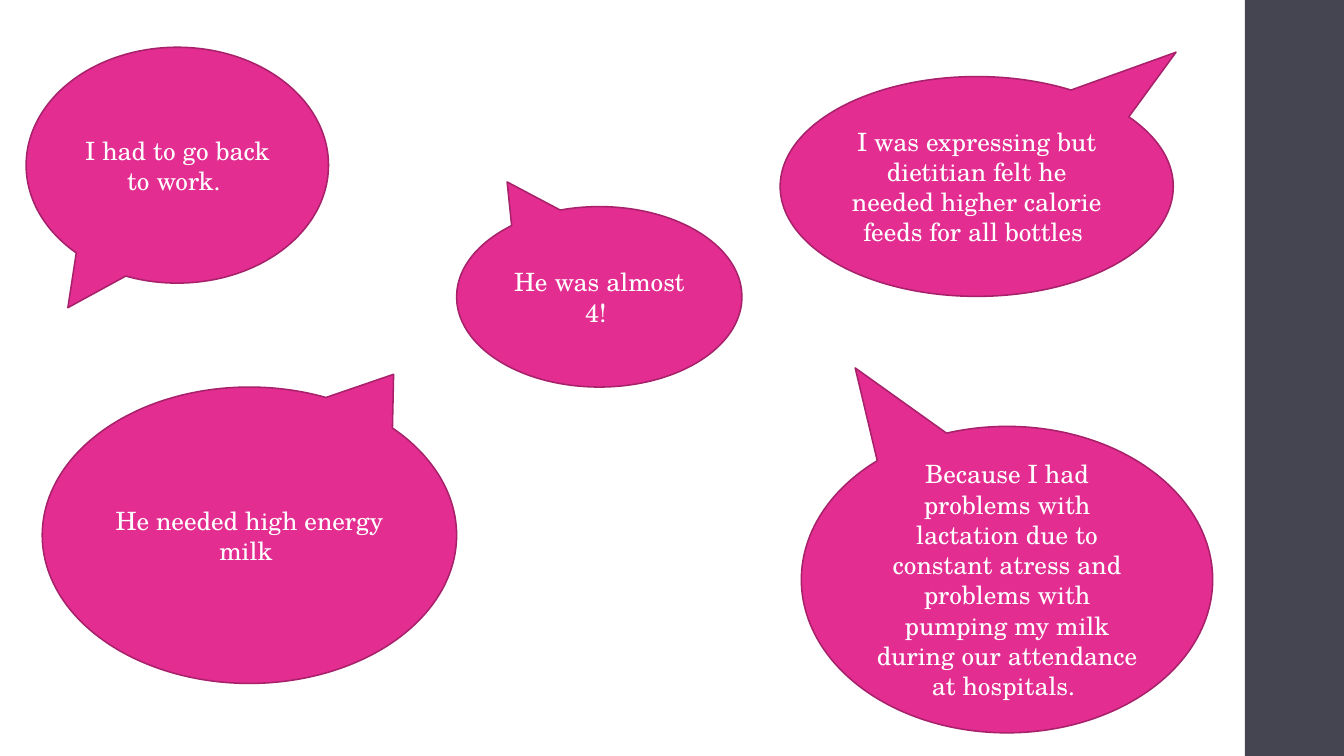
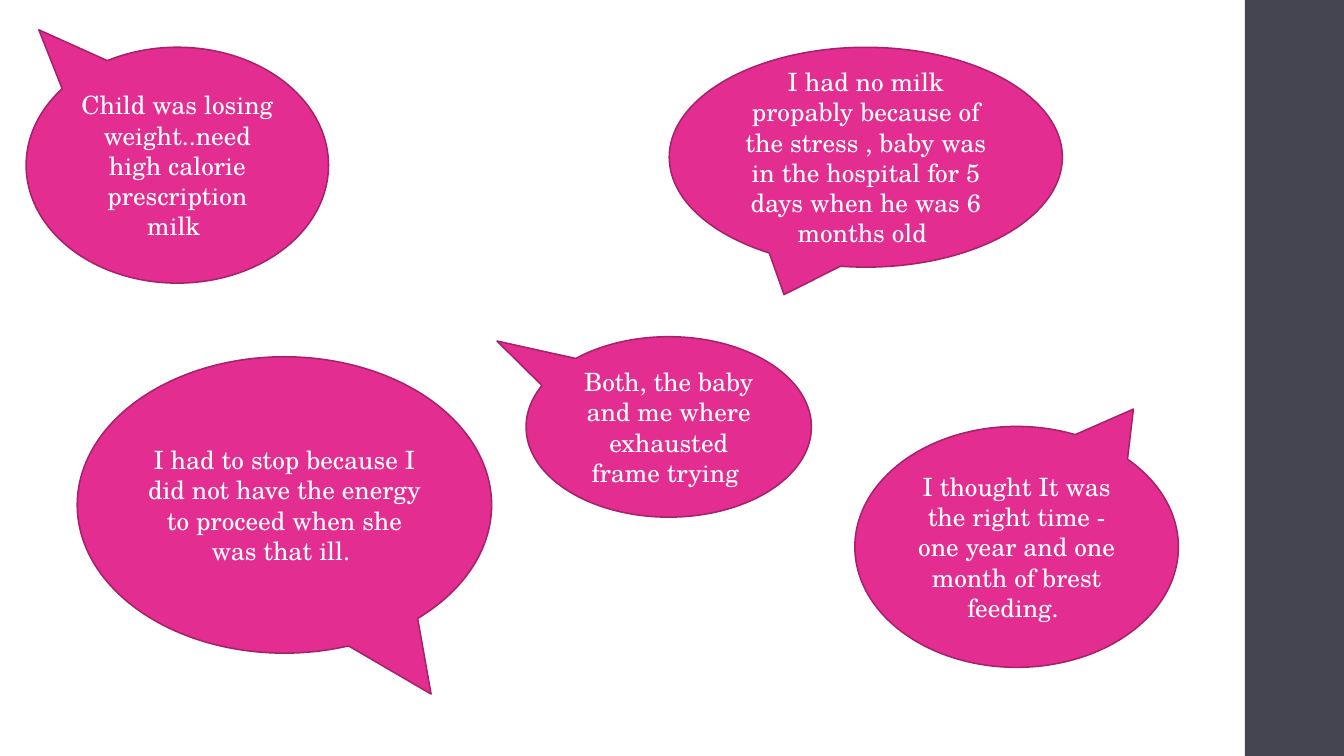
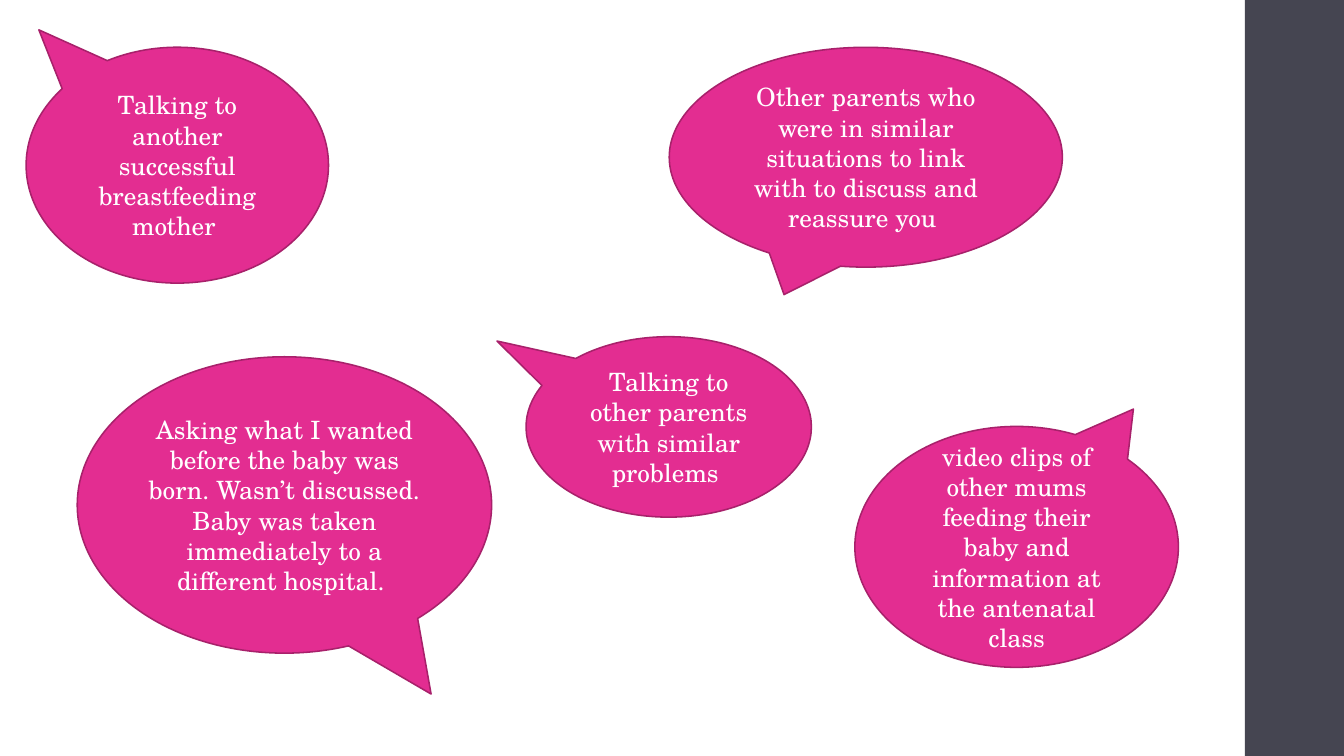
import pptx
import pptx.util
import pptx.dml.color
import pptx.enum.shapes
import pptx.enum.text

Pt = pptx.util.Pt
SHAPE = pptx.enum.shapes.MSO_SHAPE
COLORS = {"band": "454551", "bubble": "E32D91", "outline": "A8216B", "text": "FFFFFF"}
FONT = "TeX Gyre Schola"
WIDTH, HEIGHT = 960, 540
BAND_LEFT = 889.2

# Bubble sizes: width, height
ROUND = (216, 168.5)
LARGE = (296, 211.7)
WIDE = (280.8, 157)
SMALL = (203.8, 128.9)
TALL = (293.8, 218.9)
MEDIUM = (231.1, 172.1)

# Bubble places: left, top, size, tail tip as a share of the size from the centre
stopping_places = [
    (18.7, 33.8, ROUND, (-0.362, 0.604)),
    (572.4, 304.6, TALL, (-0.369, -0.691)),
    (30.2, 276.5, LARGE, (0.348, -0.543)),
    (557.3, 54.7, WIDE, (0.507, -0.611)),
    (326.2, 147.6, SMALL, (-0.323, -0.637)),
]
common_places = [
    (18.7, 33.8, ROUND, (-0.458, -0.574)),
    (610.6, 304.6, MEDIUM, (0.361, -0.572)),
    (55.2, 254.9, LARGE, (0.354, 0.638)),
    (478.1, 33.8, WIDE, (-0.208, 0.625)),
    (375.8, 240.5, SMALL, (-0.602, -0.476)),
]

# Quotes of each slide, in the order of its places; the closing space is part of the text
slide_quotes = [
    (stopping_places, [
        "I had to go back to work. ",
        "Because I had problems with lactation due to constant atress and problems "
        "with pumping my milk during our attendance at hospitals. ",
        "He needed high energy milk ",
        "I was expressing but dietitian felt he needed higher calorie feeds for all bottles ",
        "He was almost 4! ",
    ]),
    (common_places, [
        "Child was losing weight..need high calorie prescription milk ",
        "I thought It was the right time - one year and one month of brest feeding. ",
        "I had to stop because I did not have the energy to proceed when she was that ill. ",
        "I had no milk propably because of the stress , baby was in the hospital "
        "for 5 days when he was 6 months old ",
        "Both, the baby and me where exhausted frame trying ",
    ]),
    (common_places, [
        "Talking to another successful breastfeeding mother ",
        "video clips of other mums feeding their baby and information at the antenatal class",
        "Asking what I wanted before the baby was born. Wasn’t discussed. "
        "Baby was taken immediately to a different hospital. ",
        "Other parents who were in similar situations to link with to discuss and reassure you ",
        "Talking to other parents with similar problems ",
    ]),
]


def rgb(name):
    return pptx.dml.color.RGBColor.from_string(COLORS[name])


def add_filled(slide, kind, left, top, width, height, fill):
    shape = slide.shapes.add_shape(kind, Pt(left), Pt(top), Pt(width), Pt(height))
    shape.shadow.inherit = False
    shape.fill.solid()
    shape.fill.fore_color.rgb = rgb(fill)
    return shape


deck = pptx.Presentation()
deck.slide_width, deck.slide_height = Pt(WIDTH), Pt(HEIGHT)
blank_layout = deck.slide_layouts[6]

for places, quotes in slide_quotes:
    slide = deck.slides.add_slide(blank_layout)

    # Dark band on the right edge
    band = add_filled(slide, SHAPE.RECTANGLE, BAND_LEFT, 0, WIDTH - BAND_LEFT, HEIGHT, "band")
    band.line.fill.background()

    # Speech bubbles
    for (left, top, (width, height), tail), quote in zip(places, quotes):
        bubble = add_filled(slide, SHAPE.OVAL_CALLOUT, left, top, width, height, "bubble")
        bubble.adjustments[0], bubble.adjustments[1] = tail
        bubble.line.color.rgb = rgb("outline")
        bubble.line.width = Pt(1.1)
        frame = bubble.text_frame
        frame.word_wrap = True
        frame.vertical_anchor = pptx.enum.text.MSO_ANCHOR.MIDDLE
        frame.text = quote
        paragraph = frame.paragraphs[0]
        paragraph.alignment = pptx.enum.text.PP_ALIGN.CENTER
        paragraph.font.name = FONT
        paragraph.font.size = Pt(18)
        paragraph.font.color.rgb = rgb("text")

deck.save("out.pptx")
